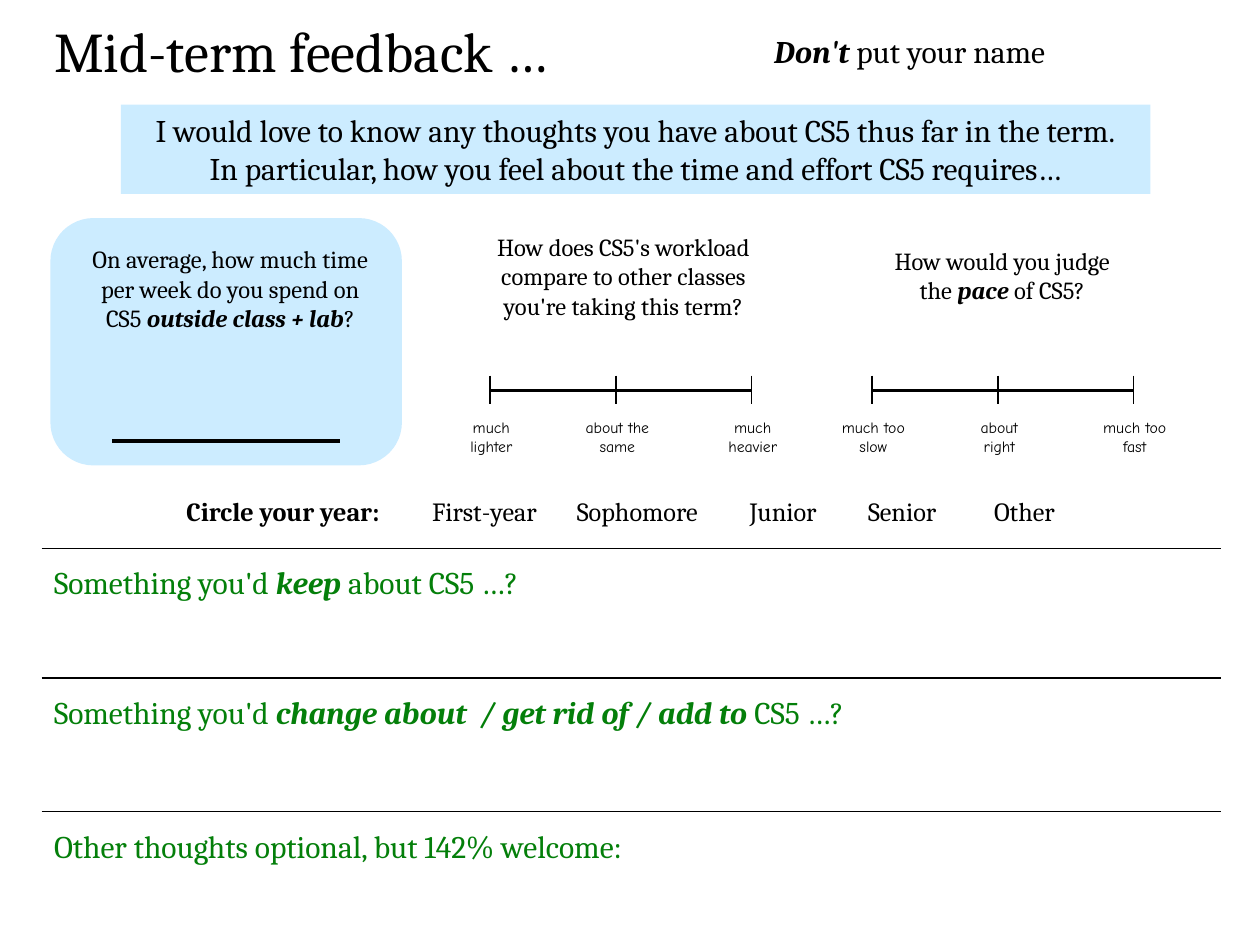
from lxml import etree
from pptx import Presentation
from pptx import util as u
from pptx.dml.color import RGBColor
from pptx.enum import shapes, text
from pptx.oxml.ns import qn

BLACK = RGBColor(0x00, 0x00, 0x00)
GREEN = RGBColor(0x04, 0x7F, 0x0A)
PALE_BLUE = RGBColor(0xCC, 0xEC, 0xFF)
SERIF = "Cambria"
CASUAL = "Comic Neue"
CENTER = text.PP_ALIGN.CENTER
LEFT = text.PP_ALIGN.LEFT


def write(shape, parts, size, color=BLACK, align=LEFT, font=SERIF, wrap=True):
    """Fill a shape with runs of (words, style), where style holds 'b' and/or 'i'."""
    frame = shape.text_frame
    frame.word_wrap = wrap
    frame.vertical_anchor = text.MSO_ANCHOR.TOP
    para = frame.paragraphs[0]
    para.alignment = align
    for words, style in parts:
        if words == "\n":
            para.add_line_break()
            continue
        span = para.add_run()
        span.text = words
        span.font.name = font
        span.font.size = u.Pt(size)
        span.font.color.rgb = color
        span.font.bold = "b" in style
        span.font.italic = "i" in style
    return para


def add_label(page, box, parts, size, **options):
    label = page.shapes.add_textbox(*map(u.Cm, box))
    write(label, parts, size, **options)
    return label


def add_panel(page, kind, box):
    panel = page.shapes.add_shape(kind, *map(u.Cm, box))
    panel.shadow.inherit = False
    panel.fill.solid()
    panel.fill.fore_color.rgb = PALE_BLUE
    panel.line.fill.background()
    return panel


def add_line(page, x1, y1, x2, y2, width):
    line = page.shapes.add_connector(
        shapes.MSO_CONNECTOR.STRAIGHT, *map(u.Cm, (x1, y1, x2, y2)))
    line.line.color.rgb = BLACK
    line.line.width = u.Pt(width)
    etree.SubElement(line._element.spPr, qn("a:effectLst"))


def add_heading(page, left, top):
    add_label(page, (left, top, 15.88, 1.6), [("Mid-term feedback …", "")], 32)
    add_label(page, (left + 14.4, top + 0.33, 6.2, 1.02),
              [("Don't", "bi"), (" put your name", "")], 18,
              align=CENTER, wrap=False)


def add_banner(page, box):
    banner = add_panel(page, shapes.MSO_SHAPE.RECTANGLE, box)
    write(banner, [
        ("I would love to know any thoughts you have about CS5 thus far in the term.", ""),
        ("\n", ""),
        ("In particular, how you feel about the time and effort CS5 requires…", ""),
    ], 18, align=CENTER)


def add_time_question(page, box):
    left, top, width, height = box
    panel = add_panel(page, shapes.MSO_SHAPE.ROUNDED_RECTANGLE, box)
    panel.line.color.rgb = PALE_BLUE
    panel.line.width = u.Pt(3)
    add_label(page, (left + 0.4, top + 0.35, 6.35, 2.06),
              [("On average, how much time per week do you spend on CS5 ", ""),
               ("outside class + lab", "bi"), ("?", "")], 14, align=CENTER)
    answer_y = top + 4.44
    add_line(page, left + 1.19, answer_y, left + 5.79, answer_y, 2.25)


def add_scale(page, left, axis_y, question_box, question, choices):
    """A question above a three-tick axis; the question box is offset from the axis start."""
    dx, dy, width, height = question_box
    add_label(page, (left + dx, axis_y + dy, width, height), question, 14, align=CENTER)
    ticks = (0, 2.54, 5.27)
    add_line(page, left, axis_y, left + ticks[-1], axis_y, 1.5)
    for offset, choice in zip(ticks, choices):
        x = left + offset
        add_line(page, x, axis_y - 0.3, x, axis_y + 0.28, 0.75)
        add_label(page, (x - 0.94, axis_y + 0.42, 1.93, 1.02), [(choice, "")], 9,
                  align=CENTER, font=CASUAL)


def add_year_row(page, box):
    years = ("First-year", "Sophomore", "Junior", "Senior", "Other")
    tab_stops = (4.95, 7.87, 11.35, 13.74, 16.28)
    row = page.shapes.add_textbox(*map(u.Cm, box))
    row.text_frame.margin_left = u.Cm(1.75)
    para = write(row, [("Circle your year:", "b")]
                 + [("\t" + year, "") for year in years], 15)
    tab_list = etree.SubElement(para._p.get_or_add_pPr(), qn("a:tabLst"))
    for stop in tab_stops:
        etree.SubElement(tab_list, qn("a:tab"), pos=str(u.Cm(stop)), algn="l")


def add_prompt(page, left, top, width, parts):
    add_line(page, left, top, left + width, top, 0.75)
    add_label(page, (left, top + 0.18, 19.9, 1.02), parts, 18, color=GREEN)


def main():
    deck = Presentation()
    deck.slide_width, deck.slide_height = u.Cm(25.4), u.Cm(19.05)
    page = deck.slides.add_slide(deck.slide_layouts[6])

    add_heading(page, 0.84, 0.2)
    add_banner(page, (2.44, 2.11, 20.75, 1.8))
    add_time_question(page, (1.07, 4.45, 6.98, 4.88))
    add_scale(page, 9.88, 7.87, (-0.61, -3.32, 6.6, 2.06),
              [("How does CS5's workload compare to other classes "
                "you're taking this term?", "")],
              ("much lighter", "about the same", "much heavier"))
    add_scale(page, 17.58, 7.87, (-0.08, -3.04, 5.41, 1.45),
              [("How would you judge the ", ""), ("pace ", "bi"), ("of CS5?", "")],
              ("much too slow", "about right", "much too fast"))
    add_year_row(page, (2.01, 9.86, 21.06, 0.89))

    prompts = (
        (11.05, [("Something you'd ", ""), ("keep", "bi"), (" about CS5 …?", "")]),
        (13.67, [("Something you'd ", ""),
                 ("change about  / get rid of / add to", "bi"), (" CS5 …?", "")]),
        (16.36, [("Other thoughts optional, but 142% welcome:", "")]),
    )
    for top, parts in prompts:
        add_prompt(page, 0.84, top, 23.77, parts)

    deck.save("out.pptx")


if __name__ == "__main__":
    main()
